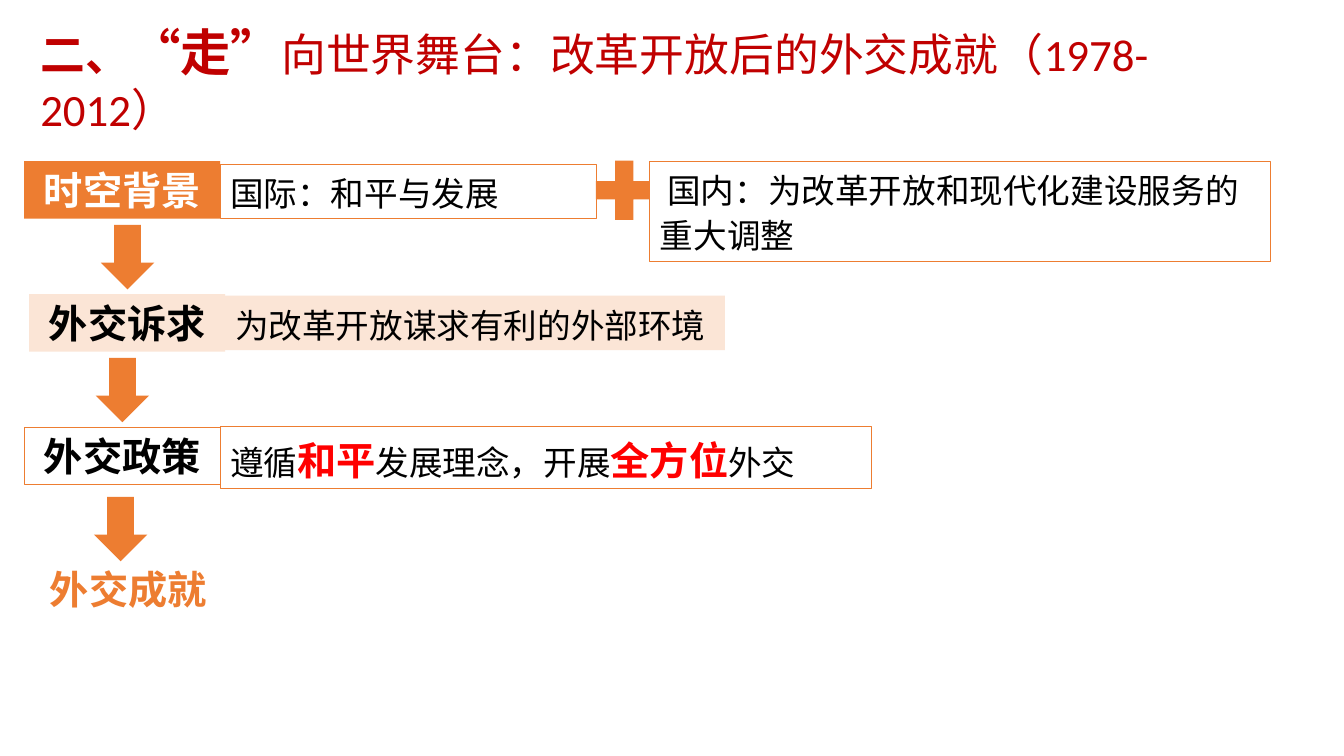
import pptx
import pptx.util
import pptx.dml.color
import pptx.enum.dml
import pptx.enum.lang
import pptx.enum.shapes
import pptx.enum.text

Pt = pptx.util.Pt
RGBColor = pptx.dml.color.RGBColor
SHAPES = pptx.enum.shapes.MSO_SHAPE
ALIGN = pptx.enum.text.PP_ALIGN

ORANGE = RGBColor(0xED, 0x7D, 0x31)
PEACH = RGBColor(0xFB, 0xE5, 0xD6)
CRIMSON = RGBColor(0xC0, 0x00, 0x00)
RED = RGBColor(0xFF, 0x00, 0x00)
WHITE = RGBColor(0xFF, 0xFF, 0xFF)
BLACK = RGBColor(0x00, 0x00, 0x00)

BASE_FONT = {
    "name": "Calibri",
    "language_id": pptx.enum.lang.MSO_LANGUAGE_ID.SIMPLIFIED_CHINESE,
}
PLAIN = {"size": Pt(24), "bold": False, "color": BLACK}
STRONG = {"size": Pt(28), "bold": True, "color": RED}
HEADING = {"size": Pt(32), "bold": True, "color": CRIMSON}

LABEL_WIDTH, LABEL_HEIGHT = 140, 41
ROW_TOP, ROW_STEP = 115.2, 95


def write_text(shape, runs, paragraph_format):
    frame = shape.text_frame
    frame_format = {
        "word_wrap": True,
        "vertical_anchor": pptx.enum.text.MSO_ANCHOR.TOP,
        "auto_size": pptx.enum.text.MSO_AUTO_SIZE.SHAPE_TO_FIT_TEXT,
    }
    for name, value in frame_format.items():
        setattr(frame, name, value)
    paragraph = frame.paragraphs[0]
    for name, value in paragraph_format.items():
        setattr(paragraph, name, value)
    for text, run_format in runs:
        run = paragraph.add_run()
        run.text = text
        for name, value in {**BASE_FONT, **run_format}.items():
            if name == "color":
                run.font.color.rgb = value
            else:
                setattr(run.font, name, value)


def add_block(slide, kind, box, fill, line=None):
    shape = slide.shapes.add_shape(kind, *map(Pt, box))
    shape.shadow.inherit = False
    if fill is None:
        shape.fill.background()
    else:
        shape.fill.solid()
        shape.fill.fore_color.rgb = fill
    if line is None:
        shape.line.fill.background()
    else:
        shape.line.color.rgb = line
        shape.line.width = Pt(0.75)
    return shape


def add_title(slide, box):
    title = slide.shapes.title
    for name, value in zip(("left", "top", "width", "height"), box):
        setattr(title, name, Pt(value))
    runs = [
        ("二、", HEADING),
        ("“走”", {**HEADING, "size": Pt(36)}),
        ("向世界舞台：改革开放后的外交成就（1978-2012）", {**HEADING, "bold": False}),
    ]
    write_text(title, runs, {"alignment": ALIGN.LEFT})


def add_label(slide, box, text, fill, line, color):
    shape = add_block(slide, SHAPES.RECTANGLE, box, fill, line)
    write_text(shape, [(text, {**STRONG, "color": color})], {"alignment": ALIGN.CENTER})


def add_detail(slide, box, runs, fill, line):
    shape = add_block(slide, SHAPES.RECTANGLE, box, fill, line)
    write_text(shape, runs, {"alignment": ALIGN.LEFT, "line_spacing": 1.1})


def add_background_row(slide, left, top):
    detail_left = left + LABEL_WIDTH
    add_label(slide, (left, top, LABEL_WIDTH, LABEL_HEIGHT), "时空背景", ORANGE, None, WHITE)
    add_detail(slide, (detail_left, top + 2, 268.5, 39),
               [("国际：和平与发展", PLAIN)], WHITE, ORANGE)
    add_block(slide, SHAPES.MATH_PLUS, (detail_left + 261, top - 8, 55.4, 57.6), ORANGE)
    add_detail(slide, (detail_left + 307, top, 443, 71.3),
               [(" 国内：为改革开放和现代化建设服务的重大调整", PLAIN)], WHITE, ORANGE)


def add_demand_row(slide, left, top):
    add_label(slide, (left, top, LABEL_WIDTH, LABEL_HEIGHT), "外交诉求", PEACH, None, BLACK)
    add_detail(slide, (left + LABEL_WIDTH, top + 1, 357, 39),
               [("为改革开放谋求有利的外部环境", PLAIN)], PEACH, None)


def add_policy_row(slide, left, top):
    add_label(slide, (left, top, LABEL_WIDTH, LABEL_HEIGHT), "外交政策", WHITE, ORANGE, BLACK)
    runs = [
        ("遵循", PLAIN),
        ("和平", STRONG),
        ("发展理念，开展", PLAIN),
        ("全方位", STRONG),
        ("外交", PLAIN),
    ]
    add_detail(slide, (left + LABEL_WIDTH, top - 0.6, 465, 44.6), runs, WHITE, ORANGE)


def add_achievement_row(slide, left, top):
    add_label(slide, (left, top, LABEL_WIDTH, LABEL_HEIGHT), "外交成就", None, None, ORANGE)


def add_flow(slide, top):
    rows = [
        (add_background_row, 17.3),
        (add_demand_row, 20.9),
        (add_policy_row, 17.3),
        (add_achievement_row, 21.6),
    ]
    for index, (add_row, left) in enumerate(rows):
        add_row(slide, left, top + index * ROW_STEP)
    arrows = [(72, 45.4), (68.4, 45.4), (67, 49.7)]
    for index, (left, offset) in enumerate(arrows):
        box = (left, top + index * ROW_STEP + offset, 38.2, 46)
        add_block(slide, SHAPES.DOWN_ARROW, box, ORANGE)


def main():
    presentation = pptx.Presentation()
    presentation.slide_width = Pt(960)
    presentation.slide_height = Pt(540)
    slide = presentation.slides.add_slide(presentation.slide_layouts[5])
    add_title(slide, (21.6, 11.5, 887, 51))
    add_flow(slide, ROW_TOP)
    presentation.save("out.pptx")


if __name__ == "__main__":
    main()
